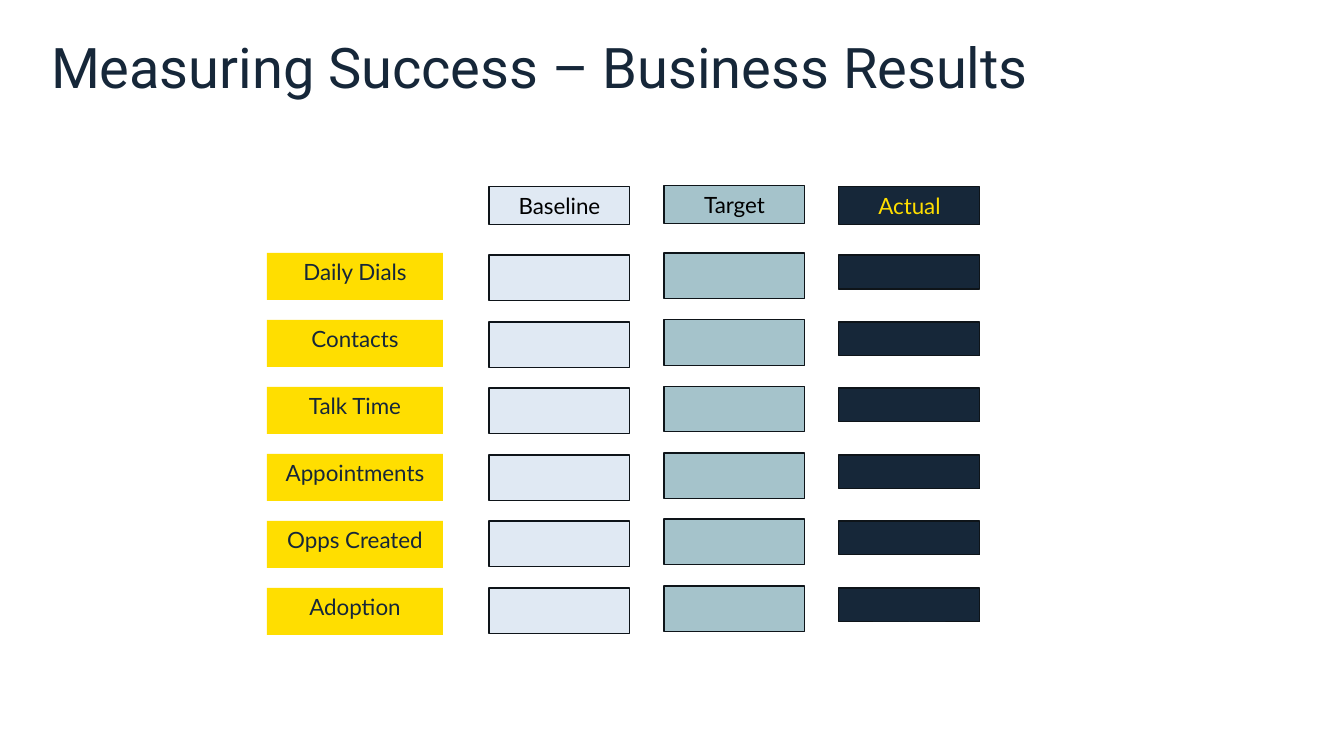
from dataclasses import dataclass

from pptx import Presentation
from pptx.dml.color import RGBColor
from pptx.enum.shapes import MSO_SHAPE
from pptx.enum.text import MSO_ANCHOR, MSO_AUTO_SIZE, PP_ALIGN
from pptx.util import Emu, Pt

PX = 914400 / 100.8  # EMU in one px


def px(n):
    return Emu(round(n * PX))


@dataclass(frozen=True)
class Theme:
    navy: str = "162739"
    yellow: str = "FFDE00"
    pale: str = "E0E9F3"
    teal: str = "A5C3CB"
    outline: str = "0E1419"
    black: str = "000000"
    title_font: str = "Roboto"
    body_font: str = "Lato"
    title_size: int = 40
    body_size: int = 16
    line_width: float = 0.75


class SlideBuilder:
    def __init__(self, prs, theme):
        self.theme = theme
        self.s = prs.slides.add_slide(prs.slide_layouts[5])  # title only

    def place(self, sp, box):
        for name, n in zip(("left", "top", "width", "height"), box):
            setattr(sp, name, px(n))

    def add_text(self, tf, text, font, size, color, frame, para):
        for name, value in frame.items():
            setattr(tf, name, value)
        p = tf.paragraphs[0]
        for name, value in para.items():
            setattr(p, name, value)
        r = p.add_run()
        r.text = text
        for name, value in {"name": font, "size": Pt(size)}.items():
            setattr(r.font, name, value)
        r.font.color.rgb = RGBColor.from_string(color)

    def title(self, text, box):
        t = self.theme
        sp = self.s.shapes.title
        self.place(sp, box)
        frame = {"vertical_anchor": MSO_ANCHOR.MIDDLE, "word_wrap": True,
                 "auto_size": MSO_AUTO_SIZE.NONE}
        para = {"alignment": PP_ALIGN.LEFT, "line_spacing": 0.9}
        self.add_text(sp.text_frame, text, t.title_font, t.title_size, t.navy, frame, para)

    def box(self, box, fill, outlined=True, text=None, color=None, wrap=True):
        t = self.theme
        sp = self.s.shapes.add_shape(MSO_SHAPE.RECTANGLE, *map(px, box))
        sp.shadow.inherit = False
        sp.fill.solid()
        sp.fill.fore_color.rgb = RGBColor.from_string(fill)
        if outlined:
            sp.line.color.rgb = RGBColor.from_string(t.outline)
            sp.line.width = Pt(t.line_width)
        else:
            sp.line.fill.background()
        if text:
            frame = {"vertical_anchor": MSO_ANCHOR.TOP, "word_wrap": wrap}
            para = {"alignment": PP_ALIGN.CENTER}
            self.add_text(sp.text_frame, text, t.body_font, t.body_size, color, frame, para)


def main():
    prs = Presentation()
    prs.slide_width, prs.slide_height = px(1344), px(756)
    theme = Theme()
    slide = SlideBuilder(prs, theme)
    slide.title("Measuring Success – Business Results", (41, 27, 1159, 87))

    # Row labels
    metrics = ["Daily Dials", "Contacts", "Talk Time",
               "Appointments", "Opps Created", "Adoption"]
    for i, metric in enumerate(metrics):
        slide.box((267, 253 + 67 * i, 176, 47), theme.yellow, outlined=False,
                  text=metric, color=theme.navy, wrap=False)

    # Columns: heading, fill, text colour, heading top, first cell top, cell height
    columns = [
        ("Baseline", theme.pale, theme.black, 187, 255, 46),
        ("Target", theme.teal, theme.black, 186, 253, 46),
        ("Actual", theme.navy, theme.yellow, 187, 255, 34),
    ]
    first_row_to_last = 333
    for c, (heading, fill, color, head_top, top, height) in enumerate(columns):
        left = 489 + 175 * c
        slide.box((left, head_top, 141, 38), fill, text=heading, color=color)
        for i in range(len(metrics)):
            offset = round(first_row_to_last * i / (len(metrics) - 1))
            slide.box((left, top + offset, 141, height), fill)

    prs.save("out.pptx")


if __name__ == "__main__":
    main()
